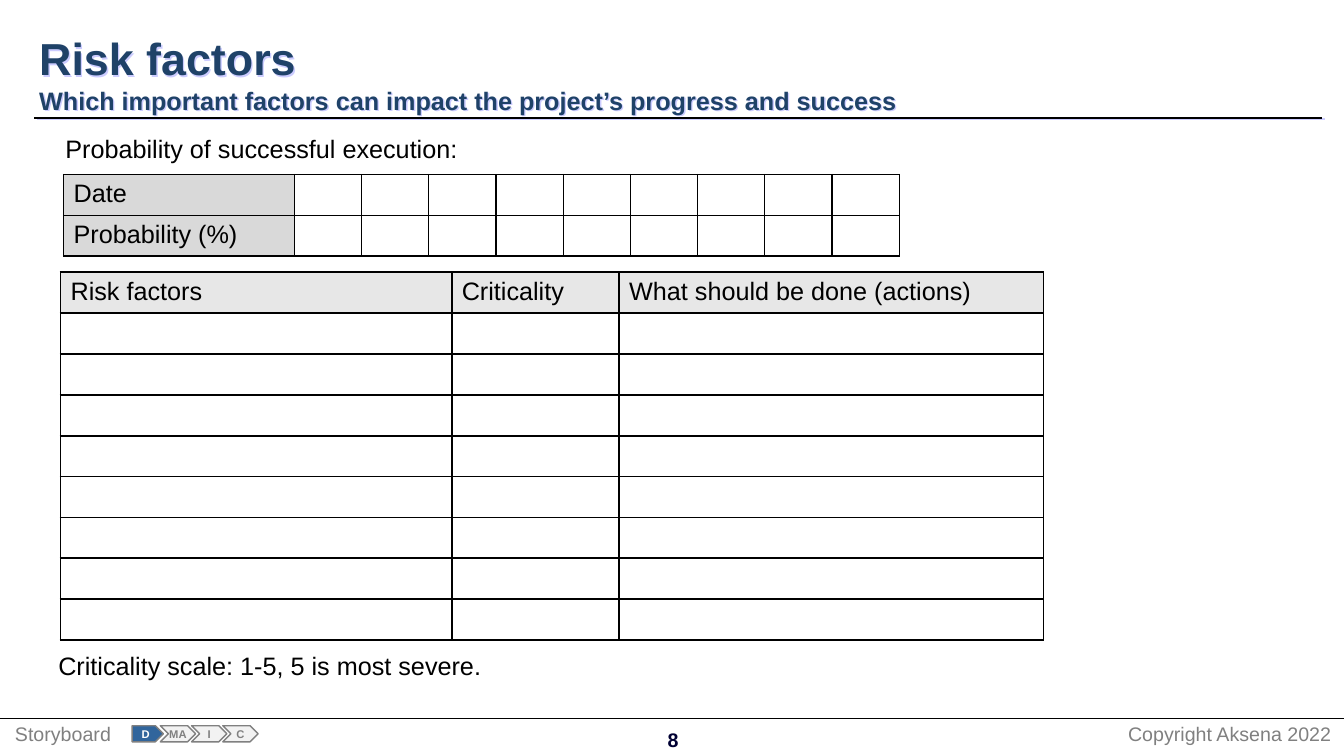
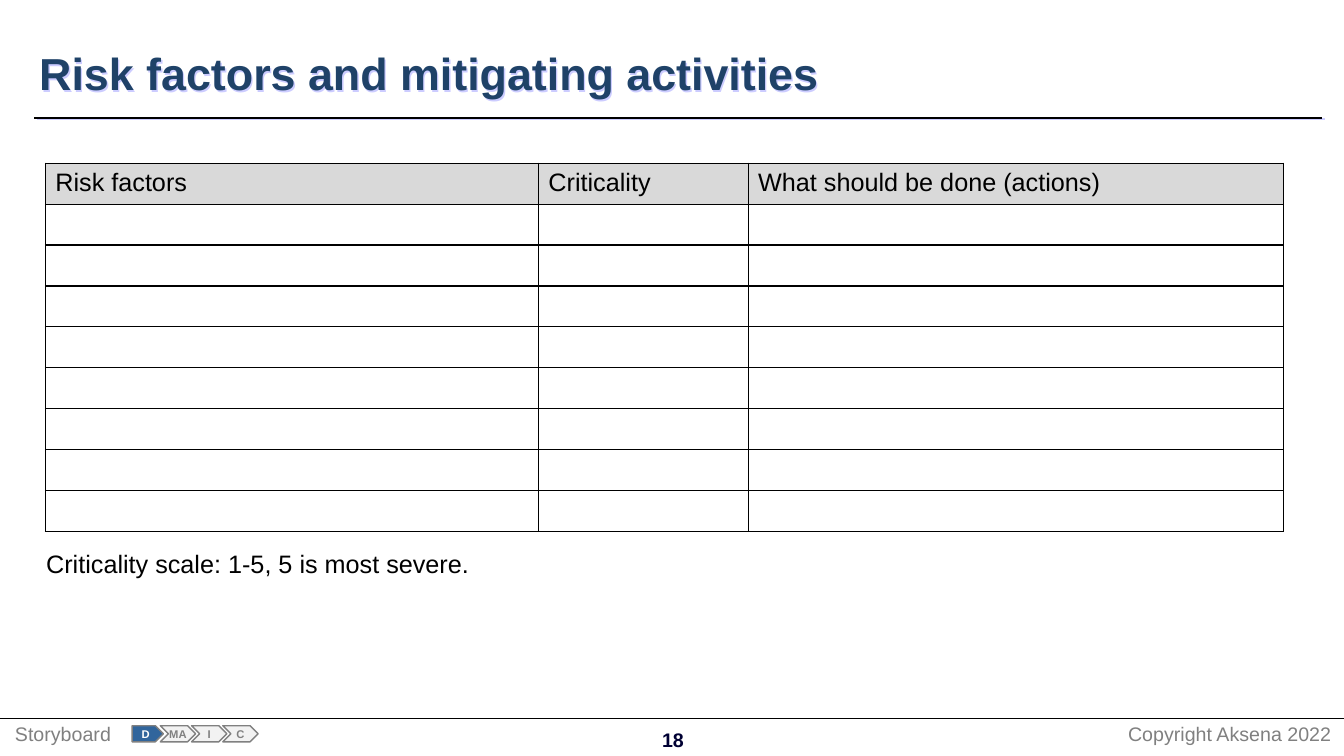
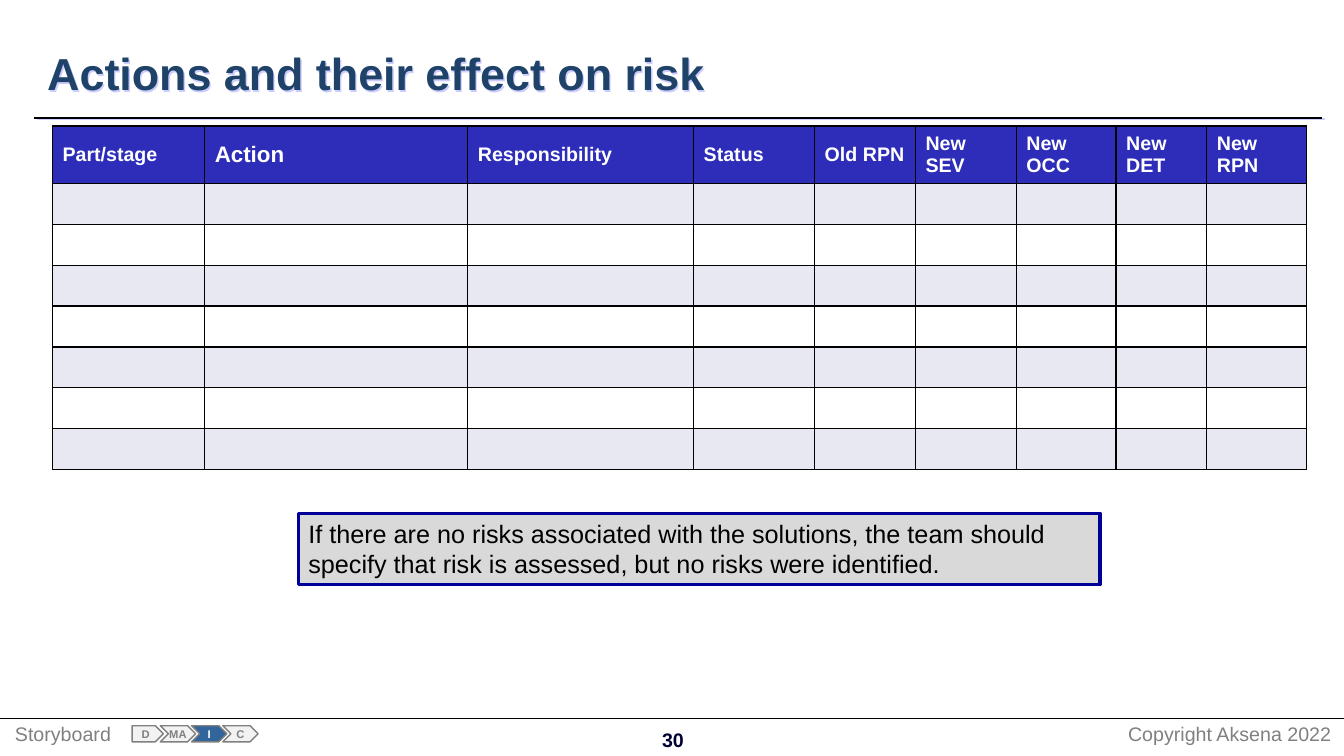
from lxml.etree import SubElement
from pptx import Presentation
from pptx.dml.color import RGBColor
from pptx.enum.shapes import MSO_CONNECTOR, MSO_SHAPE
from pptx.enum.text import MSO_ANCHOR, PP_ALIGN
from pptx.oxml.ns import qn
from pptx.util import Inches, Pt

COLORS = {
    "black": "000000", "white": "FFFFFF", "title": "1F4268", "shadow": "CCCCFF",
    "page": "000033", "gray": "808080", "header": "D9D9D9", "pale": "E7E7E7",
    "idle": "F2F2F2", "active": "31659C", "blue": "2D2DB9", "band": "E8E8F3",
    "navy": "000099",
}
FONT = "Arial"
STAGES = ["D", "MA", "I", "C"]
RISK_HEADINGS = ["Risk factors", "Criticality", "What should be done (actions)"]
SCALE_NOTE = "Criticality scale: 1-5, 5 is most severe."


def color(name):
    return RGBColor.from_string(COLORS[name])


class Deck:
    """Holds the shared style and the slide being built."""

    def __init__(self):
        self.presentation = Presentation()
        self.presentation.slide_width = Inches(13.33)
        self.presentation.slide_height = Inches(7.5)
        self.slide = None

    def new_slide(self, number, active_stage, title, subtitle=None, title_left=0.29):
        self.slide = self.presentation.slides.add_slide(self.presentation.slide_layouts[6])
        # Title and its rule
        self.shadow(self.line(0.34, 1.17, 13.11, 1.5), 2.2, 27)
        box = self.text(title_left, 0.3, 10.95, 0.85, title, 32, "title",
                        bold=True, anchor=MSO_ANCHOR.MIDDLE)
        box.text_frame.margin_top = box.text_frame.margin_bottom = 0
        if subtitle:
            paragraph = box.text_frame.paragraphs[0]
            paragraph.add_line_break()
            self.run(paragraph, subtitle, 18, "title", bold=True)
        self.shadow(box, 1.4, 45)
        # Footer
        self.line(0, 7.13, 13.33, 0.75)
        self.text(6.13, 7.17, 1.09, 0.33, str(number), 14, "page", bold=True,
                  align=PP_ALIGN.CENTER)
        self.text(11.09, 7.11, 2.23, 0.34, "Copyright Aksena 2022", 14, "gray", wrap=False)
        self.text(0.05, 7.11, 1.16, 0.34, "Storyboard", 14, "gray", wrap=False)
        self.stage_tracker(active_stage)

    def run(self, paragraph, text, size, color_name, bold=False):
        run = paragraph.add_run()
        run.text = text
        run.font.name = FONT
        run.font.size = Pt(size)
        run.font.bold = bold
        run.font.color.rgb = color(color_name)

    def fill_frame(self, shape, text, size, color_name, bold=False,
                   align=PP_ALIGN.LEFT, anchor=MSO_ANCHOR.TOP, wrap=True):
        frame = shape.text_frame
        frame.word_wrap = wrap
        frame.vertical_anchor = anchor
        paragraph = frame.paragraphs[0]
        paragraph.alignment = align
        self.run(paragraph, text, size, color_name, bold)

    def text(self, left, top, width, height, text, size=18, color_name="black", **style):
        box = self.slide.shapes.add_textbox(
            Inches(left), Inches(top), Inches(width), Inches(height))
        self.fill_frame(box, text, size, color_name, **style)
        return box

    def line(self, left, top, right, weight):
        line = self.slide.shapes.add_connector(
            MSO_CONNECTOR.STRAIGHT, Inches(left), Inches(top), Inches(right), Inches(top))
        line.line.color.rgb = color("black")
        line.line.width = Pt(weight)
        SubElement(line._element.spPr, qn("a:effectLst"))
        return line

    def shadow(self, shape, distance, angle):
        properties = shape._element.spPr
        effects = properties.find(qn("a:effectLst"))
        if effects is None:
            effects = SubElement(properties, qn("a:effectLst"))
        outer = SubElement(effects, qn("a:outerShdw"), dist=str(Pt(distance)),
                           dir=str(angle * 60000), algn="ctr", rotWithShape="0")
        SubElement(outer, qn("a:srgbClr"), val=COLORS["shadow"])

    def shape(self, shapes, kind, left, top, width, height, fill, outline, weight):
        shape = shapes.add_shape(
            kind, Inches(left), Inches(top), Inches(width), Inches(height))
        shape.shadow.inherit = False
        shape.fill.solid()
        shape.fill.fore_color.rgb = color(fill)
        shape.line.color.rgb = color(outline)
        shape.line.width = Pt(weight)
        return shape

    def stage_tracker(self, active_stage):
        group = self.slide.shapes.add_group_shape()
        for index, stage in enumerate(STAGES):
            if index == 0:
                kind, left, width = MSO_SHAPE.PENTAGON, 1.31, 0.31
            else:
                kind, left, width = MSO_SHAPE.CHEVRON, 1.28 + 0.31 * index, 0.35
            active = stage == active_stage
            arrow = self.shape(group.shapes, kind, left, 7.2, width, 0.16,
                               "active" if active else "idle", "gray", 1)
            frame = arrow.text_frame
            frame.margin_left = frame.margin_right = 0
            frame.margin_top = frame.margin_bottom = 0
            self.fill_frame(arrow, stage, 8, "white" if active else "gray", bold=True,
                            align=PP_ALIGN.CENTER, anchor=MSO_ANCHOR.MIDDLE, wrap=False)

    def callout(self, left, top, width, height, text):
        box = self.shape(self.slide.shapes, MSO_SHAPE.RECTANGLE, left, top, width, height,
                         "header", "navy", 2.25)
        self.fill_frame(box, text, 18, "black")

    def table(self, left, top, widths, heights, labels, fill_for, border=1,
              size_for=lambda label: 18, **style):
        """labels maps (row, column) to text; fill_for gives a colour name or None."""
        table = self.slide.shapes.add_table(
            len(heights), len(widths), Inches(left), Inches(top),
            Inches(sum(widths)), Inches(sum(heights))).table
        table.first_row = table.horz_banding = False
        for column, width in zip(table.columns, widths):
            column.width = Inches(width)
        for row_index, height in enumerate(heights):
            table.rows[row_index].height = Inches(height)
            for column_index in range(len(widths)):
                cell = table.cell(row_index, column_index)
                self.cell_borders(cell, border)
                fill = fill_for(row_index, column_index)
                if fill:
                    cell.fill.solid()
                    cell.fill.fore_color.rgb = color(fill)
                else:
                    cell.fill.background()
                label = labels.get((row_index, column_index))
                if label:
                    cell.vertical_anchor = style.get("anchor", MSO_ANCHOR.TOP)
                    self.run(cell.text_frame.paragraphs[0], label, size_for(label),
                             style.get("color_name", "black"), style.get("bold", False))

    def cell_borders(self, cell, weight):
        properties = cell._tc.get_or_add_tcPr()
        for side in ("lnL", "lnR", "lnT", "lnB"):
            line = SubElement(properties, qn("a:" + side), w=str(Pt(weight)))
            solid = SubElement(line, qn("a:solidFill"))
            SubElement(solid, qn("a:srgbClr"), val=COLORS["black"])

    def risk_table(self, left, top, widths, header_fill, border):
        self.table(left, top, widths, equal_parts(3.65, 9), header_row(RISK_HEADINGS),
                   lambda row, column: "white" if row else header_fill, border)


def equal_parts(total, count):
    return [total / count] * count


def header_row(headings):
    return {(0, column): heading for column, heading in enumerate(headings)}


def main():
    deck = Deck()

    # Risk factors
    deck.new_slide(8, "D", "Risk factors",
                   "Which important factors can impact the project’s progress and success")
    deck.risk_table(0.6, 2.7, [3.88, 1.66, 4.21], "pale", 1.5)
    deck.text(0.48, 6.4, 4.6, 0.4, SCALE_NOTE)
    deck.text(0.55, 1.27, 4.13, 0.4, "Probability of successful execution:", wrap=False)
    deck.table(0.63, 1.73, [2.29] + equal_parts(6, 9), equal_parts(0.81, 2),
               {(0, 0): "Date", (1, 0): "Probability (%)"},
               lambda row, column: None if column else "header")

    # Risk factors and mitigating activities
    deck.new_slide(18, "D", "Risk factors and mitigating activities")
    deck.risk_table(0.45, 1.62, [4.89, 2.08, 5.31], "header", 1)
    deck.text(0.36, 5.39, 4.44, 0.4, SCALE_NOTE, wrap=False)

    # Actions and their effect on risk
    deck.new_slide(30, "I", "Actions and their effect on risk", title_left=0.37)
    headings = ["Part/stage", "Action", "Responsibility", "Status", "Old RPN",
                "New SEV", "New OCC", "New DET", "New RPN"]
    deck.table(0.52, 1.25, [1.51, 2.61, 2.24, 1.2, 1, 1, 0.99, 0.9, 0.99],
               [0.57] + equal_parts(2.84, 7), header_row(headings),
               lambda row, column: "blue" if row == 0 else "band" if row % 2 else "white",
               size_for=lambda label: 16 if label == "Action" else 14,
               color_name="white", bold=True, anchor=MSO_ANCHOR.MIDDLE)
    deck.callout(2.96, 5.09, 7.95, 0.71,
                 "If there are no risks associated with the solutions, the team should "
                 "specify that risk is assessed, but no risks were identified.")

    deck.presentation.save("out.pptx")


if __name__ == "__main__":
    main()
